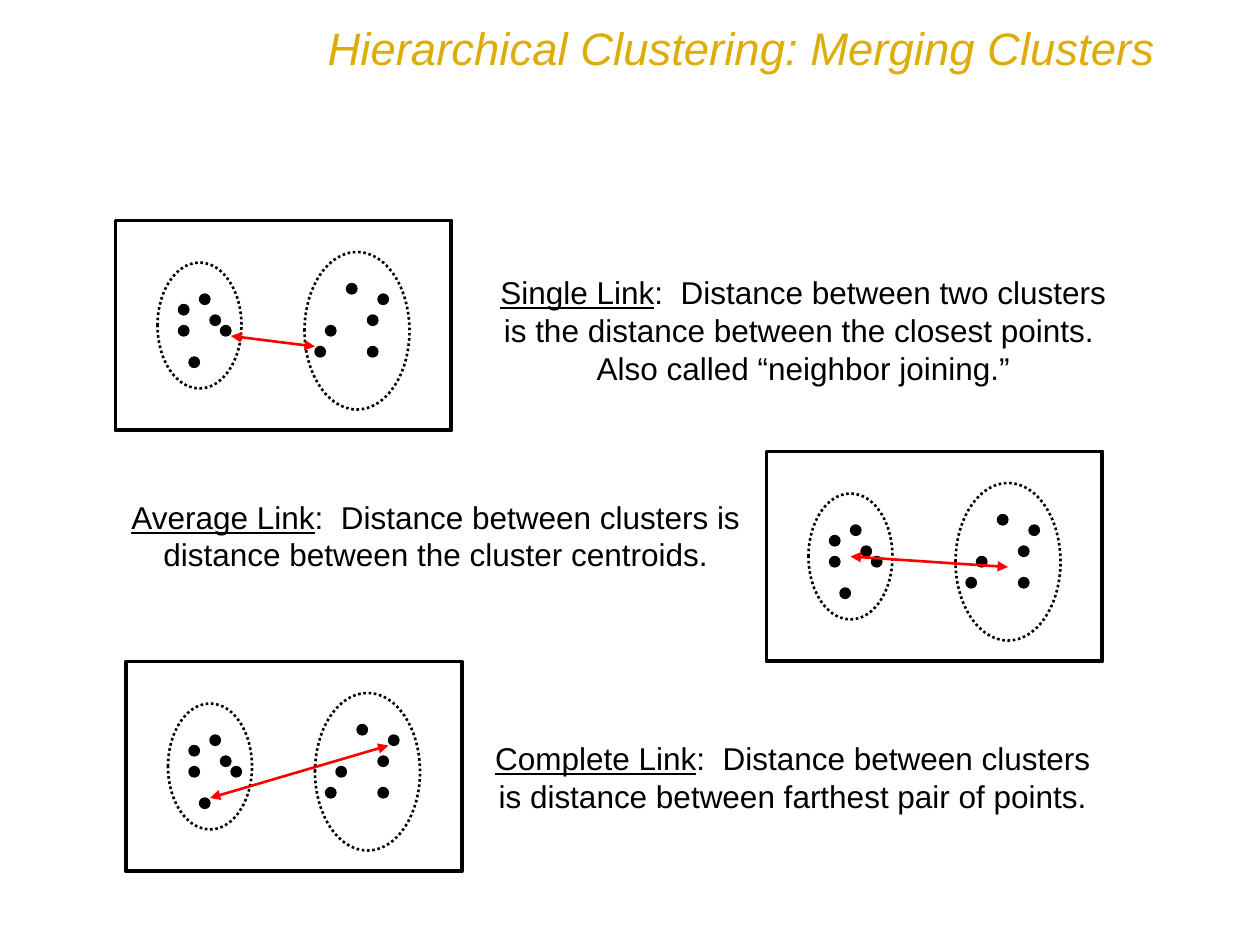
from lxml import etree
from pptx import Presentation
from pptx import util as u
from pptx.dml.color import RGBColor
from pptx.enum import dml, shapes, text
from pptx.oxml.ns import qn

EMU_PER_PX = 7620  # 120 px to the inch
FONT = "Arial"
COLORS = {"title": "DEAC06", "ink": "000000", "arrow": "FF0000"}

# Positions inside a panel, from its top left corner
PANEL_SIZE = (320, 200)
DOT_SIZE = 10
DOTS = [
    (60, 100), (80, 70), (60, 80), (100, 100), (70, 130), (90, 90),
    (190, 120), (220, 60), (250, 70), (240, 90), (240, 120), (200, 100),
]
CLUSTERS = [(40, 40, 80, 120), (180, 30, 100, 150)]

# Panel corner, arrow start and end in the panel, text box, term, definition
LINKAGES = [
    ((110, 210), (110, 110), (190, 120), (460, 254, 610, 120), "Single Link",
     ":  Distance between two clusters is the distance between the closest "
     "points.  Also called “neighbor joining.”"),
    ((730, 430), (80, 100), (230, 110), (110, 468, 610, 84), "Average Link",
     ":  Distance between clusters is distance between the cluster centroids."),
    ((120, 630), (80, 130), (250, 80), (450, 698, 610, 84), "Complete Link",
     ":  Distance between clusters is distance between farthest pair of points."),
]


def px(*lengths):
    return [u.Emu(length * EMU_PER_PX) for length in lengths]


def color(name):
    return RGBColor.from_string(COLORS[name])


def style_font(font, size, color_name):
    font.name = FONT
    font.size = u.Pt(size)
    font.color.rgb = color(color_name)


def add_title(page, words):
    title = page.shapes.title
    title.left, title.top, title.width, title.height = px(300, 0, 847, 90)
    frame = title.text_frame
    frame.text = words
    frame.auto_size = text.MSO_AUTO_SIZE.NONE
    frame.vertical_anchor = text.MSO_ANCHOR.MIDDLE
    para = frame.paragraphs[0]
    para.alignment = text.PP_ALIGN.LEFT
    style_font(para.font, 26, "title")
    para.font.italic = True


def add_outline(page, kind, bounds, weight, dash=None, filled=False):
    shape = page.shapes.add_shape(kind, *px(*bounds))
    shape.shadow.inherit = False
    if filled:
        shape.fill.solid()
        shape.fill.fore_color.rgb = color("ink")
    else:
        shape.fill.background()
    shape.line.color.rgb = color("ink")
    shape.line.width = u.Pt(weight)
    if dash:
        shape.line.dash_style = dash


def add_panel(page, left, top):
    oval = shapes.MSO_SHAPE.OVAL
    for x, y in DOTS:
        bounds = (left + x, top + y, DOT_SIZE, DOT_SIZE)
        add_outline(page, oval, bounds, 0.75, filled=True)
    for x, y, width, height in CLUSTERS:
        bounds = (left + x, top + y, width, height)
        add_outline(page, oval, bounds, 1.5, dml.MSO_LINE.ROUND_DOT)
    add_outline(page, shapes.MSO_SHAPE.RECTANGLE, (left, top, *PANEL_SIZE), 2.25)


def add_double_arrow(page, start, end):
    arrow = page.shapes.add_connector(
        shapes.MSO_CONNECTOR.STRAIGHT, *px(*start, *end))
    arrow.line.color.rgb = color("arrow")
    arrow.line.width = u.Pt(1.5)
    line = arrow.line._get_or_add_ln()
    for tag in ("a:headEnd", "a:tailEnd"):
        etree.SubElement(line, qn(tag), type="triangle")
    etree.SubElement(arrow._element.spPr, qn("a:effectLst"))


def add_definition(page, bounds, term, meaning):
    box = page.shapes.add_textbox(*px(*bounds))
    frame = box.text_frame
    frame.word_wrap = True
    frame.auto_size = text.MSO_AUTO_SIZE.SHAPE_TO_FIT_TEXT
    frame.vertical_anchor = text.MSO_ANCHOR.MIDDLE
    para = frame.paragraphs[0]
    para.alignment = text.PP_ALIGN.CENTER
    style_font(para.font, 18, "ink")
    span = para.add_run()
    span.text = term
    span.font.underline = True
    para.add_run().text = meaning


def main():
    deck = Presentation()
    deck.slide_width, deck.slide_height = px(1200, 900)
    page = deck.slides.add_slide(deck.slide_layouts[5])  # Title Only

    add_title(page, "Hierarchical Clustering: Merging Clusters")

    # One panel, arrow and definition for each linkage rule
    for (left, top), start, end, bounds, term, meaning in LINKAGES:
        add_panel(page, left, top)
        add_double_arrow(page, (left + start[0], top + start[1]),
                         (left + end[0], top + end[1]))
        add_definition(page, bounds, term, meaning)

    deck.save("out.pptx")


if __name__ == "__main__":
    main()
